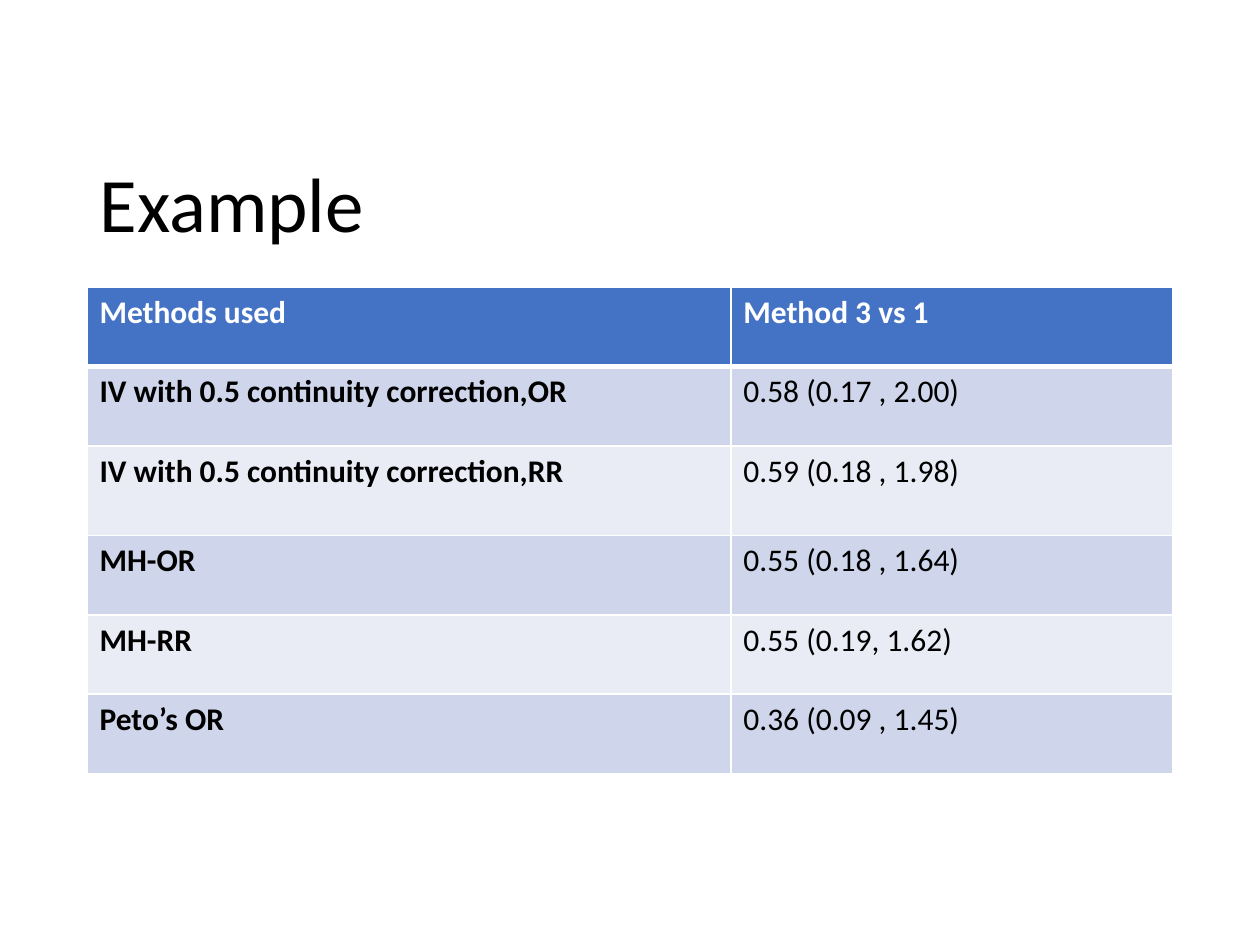
from lxml import etree
from pptx import Presentation
from pptx.dml.color import RGBColor
from pptx.enum import text
from pptx.oxml.ns import qn
from pptx.util import Inches, Pt

TITLE = "Example"
ROWS = [
    ("Methods used", "Method 3 vs 1"),
    ("IV with 0.5 continuity correction,OR", "0.58 (0.17 , 2.00)"),
    ("IV with 0.5 continuity correction,RR", "0.59 (0.18 , 1.98)"),
    ("MH-OR", "0.55 (0.18 , 1.64)"),
    ("MH-RR", "0.55 (0.19, 1.62)"),
    ("Peto’s OR", "0.36 (0.09 , 1.45)"),
]
COLORS = {"header": "4472C4", "odd": "CFD5EA", "even": "E9EBF5",
          "white": "FFFFFF", "black": "000000"}
LEFT, WIDTH = 0.69, 8.62
COL_WIDTHS = [5.11, 3.51]
ROW_HEIGHTS = [0.63, 0.63, 0.71, 0.63, 0.63, 0.63]


def write(tf, content, size=18, color="black", bold=False):
    p = tf.paragraphs[0]
    p.alignment = text.PP_ALIGN.LEFT
    r = p.add_run()
    r.text = content
    r.font.name = "Calibri"
    r.font.size = Pt(size)
    r.font.bold = bold
    r.font.color.rgb = RGBColor.from_string(COLORS[color])
    return p


def set_borders(cell, **widths):
    """Draw white borders; widths are points by side, in the order L, R, T, B."""
    tcPr = cell._tc.get_or_add_tcPr()
    for side, width in widths.items():
        ln = etree.SubElement(tcPr, qn(f"a:ln{side}"), w=str(Pt(width)))
        fill = etree.SubElement(ln, qn("a:solidFill"))
        etree.SubElement(fill, qn("a:srgbClr"), val=COLORS["white"])


prs = Presentation()
prs.slide_width, prs.slide_height = Inches(10), Inches(7.5)
s = prs.slides.add_slide(prs.slide_layouts[5])

title = s.shapes.title
title.left, title.top = Inches(LEFT), Inches(1.09)
title.width, title.height = Inches(WIDTH), Inches(1.11)
title.text_frame.vertical_anchor = text.MSO_ANCHOR.MIDDLE
write(title.text_frame, TITLE, size=44).line_spacing = 0.9

table = s.shapes.add_table(len(ROWS), len(COL_WIDTHS), Inches(LEFT), Inches(2.28),
                           Inches(WIDTH), Inches(sum(ROW_HEIGHTS))).table
for col, width in zip(table.columns, COL_WIDTHS):
    col.width = Inches(width)
for row, height in zip(table.rows, ROW_HEIGHTS):
    row.height = Inches(height)

for i, values in enumerate(ROWS):
    band = "header" if i == 0 else "odd" if i % 2 else "even"
    for j, value in enumerate(values):
        cell = table.cell(i, j)
        set_borders(cell, L=1, R=1, T=3 if i == 1 else 1, B=3 if i == 0 else 1)
        cell.fill.solid()
        cell.fill.fore_color.rgb = RGBColor.from_string(COLORS[band])
        write(cell.text_frame, value, color="white" if i == 0 else "black",
              bold=i == 0 or j == 0)

prs.save("out.pptx")
